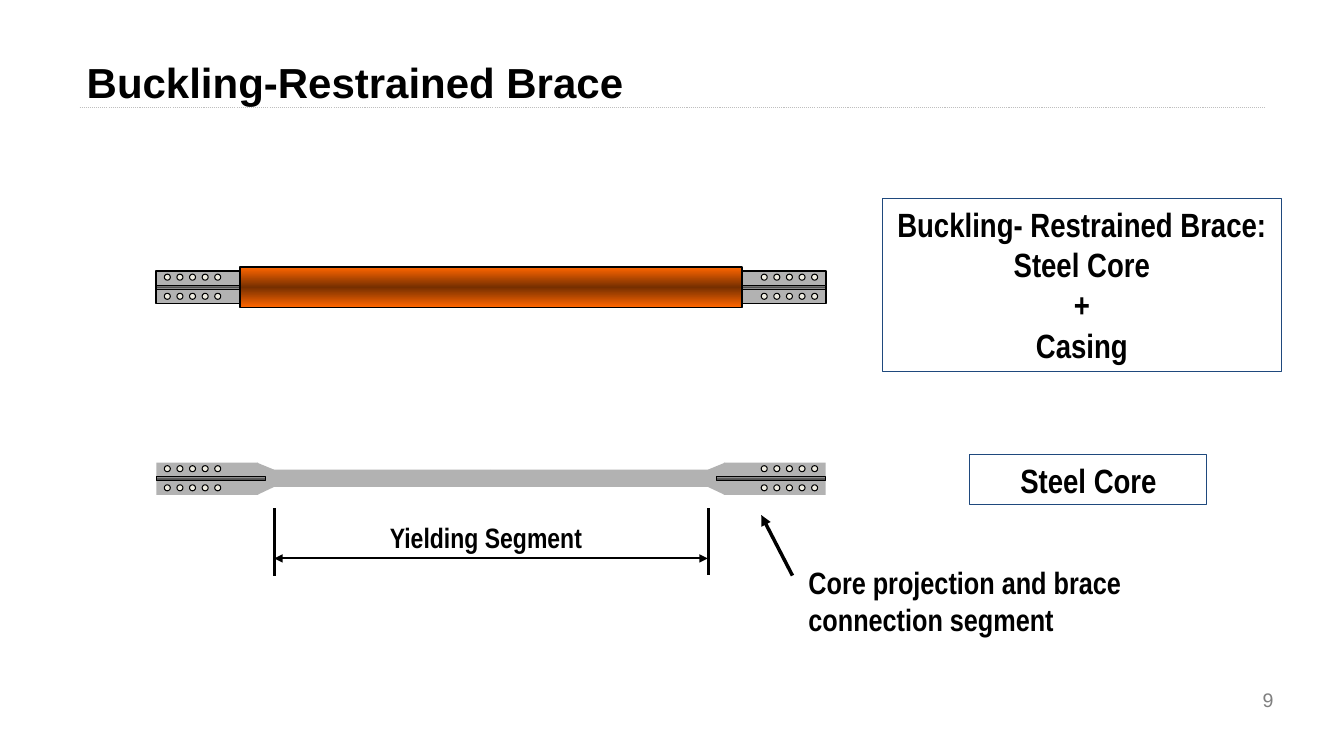
from copy import deepcopy

from lxml import etree
from pptx import Presentation
from pptx.dml.color import RGBColor
from pptx.enum.dml import MSO_LINE
from pptx.enum.shapes import MSO_CONNECTOR, MSO_SHAPE as SHAPE
from pptx.enum.text import MSO_ANCHOR as ANCHOR, MSO_AUTO_SIZE as FIT, PP_ALIGN as ALIGN
from pptx.oxml.ns import qn
from pptx.util import Inches, Pt

BLACK, STEEL, HOLE, NAVY = "000000", "B2B2B2", "EEECE1", "1F497D"
STEEL_SHADE = (STEEL, "525252", STEEL)
CASING_SHADE = ("FF6600", "762F00", "FF6600")
MIRROR = 9.74  # left end + right end of the brace

deck = Presentation()
deck.slide_width, deck.slide_height = Inches(13.33), Inches(7.5)
page = deck.slides.add_slide(deck.slide_layouts[5])


def write(box, text, size, font="Arial Narrow", color=BLACK, bold=True,
          align=ALIGN.LEFT, anchor=ANCHOR.TOP):
    frame = box.text_frame
    frame.word_wrap, frame.auto_size = True, FIT.NONE
    frame.vertical_anchor = anchor
    para = frame.paragraphs[0]
    para.text, para.alignment = text, align
    for span in para.runs:
        span.font.name, span.font.size, span.font.bold = font, Pt(size), bold
        span.font.color.rgb = RGBColor.from_string(color)


def paint(shape, fill=None, line=None, width=0.75):
    """Fill with one colour, or with a vertical gradient of three."""
    shape.shadow.inherit = False
    if isinstance(fill, tuple):
        shape.fill.gradient()
        shape.fill.gradient_angle = 270
        stop_list = shape.fill._xPr.find(qn("a:gradFill")).find(qn("a:gsLst"))
        stop_list.insert(1, deepcopy(stop_list[0]))
        for index, (stop, color) in enumerate(zip(shape.fill.gradient_stops, fill)):
            stop.position = index / 2
            stop.color.rgb = RGBColor.from_string(color)
    elif fill:
        shape.fill.solid()
        shape.fill.fore_color.rgb = RGBColor.from_string(fill)
    else:
        shape.fill.background()
    if line:
        shape.line.color.rgb = RGBColor.from_string(line)
        shape.line.width = Pt(width)
    else:
        shape.line.fill.background()


# Title and page number
title = page.shapes.title
title.left, title.top, title.width, title.height = map(Inches, (0.76, 0.47, 11.97, 0.68))
write(title, "Buckling-Restrained Brace", 30, font="Arial", anchor=ANCHOR.MIDDLE)
number = page.shapes.add_textbox(*map(Inches, (9.62, 6.74, 3.11, 0.4)))
write(number, "9", 14, font="Arial", color="7F7F7F", bold=False,
      align=ALIGN.RIGHT, anchor=ANCHOR.MIDDLE)

# Steel core, bare below and outlined inside the casing above
for top, outline in ((4.59, None), (2.69, BLACK)):
    brace = page.shapes.add_group_shape().shapes
    for mirrored in (False, True):
        parts = [  # left, drop, width, height, shape, fill, line, line width
            (2.71, 0.07, 2.16, 0.17, SHAPE.RECTANGLE, STEEL, outline, 1.25),
            (1.55, 0, 1.01, 0.32, SHAPE.RECTANGLE, STEEL, outline, 1.25),
            (1.55, 0.14, 1.08, 0.04, SHAPE.RECTANGLE, STEEL_SHADE, BLACK, 0.75),
        ]
        parts += [(1.63 + 0.125 * column, drop, 0.06, 0.06, SHAPE.OVAL, HOLE, BLACK, 0.75)
                  for drop in (0.03, 0.22) for column in range(5)]

        # Taper between the end plate and the yielding segment
        corners = [(Inches(MIRROR - x if mirrored else x), Inches(top + drop))
                   for x, drop in ((2.55, 0.32), (2.72, 0.24), (2.72, 0.07), (2.55, 0))]
        outline_builder = brace.build_freeform(*corners[0])
        outline_builder.add_line_segments(corners[1:], close=True)
        paint(outline_builder.convert_to_shape(), STEEL, outline, 1.25)

        for left, drop, width, height, kind, fill, line, weight in parts:
            x = MIRROR - left - width if mirrored else left
            part = brace.add_shape(kind, *map(Inches, (x, top + drop, width, height)))
            paint(part, fill, line, weight)

# Casing
casing = page.shapes.add_shape(SHAPE.RECTANGLE, *map(Inches, (2.38, 2.65, 4.98, 0.4)))
paint(casing, CASING_SHADE, BLACK, 1)

# Framed labels
for place, text in (
    ((8.75, 1.97, 3.96, 1.72), "Buckling- Restrained Brace:\nSteel Core\n+\nCasing"),
    ((9.62, 4.51, 2.35, 0.5), "Steel Core"),
):
    label = page.shapes.add_shape(SHAPE.RECTANGLE, *map(Inches, place))
    paint(label, line=NAVY)
    write(label, text, 24, align=ALIGN.CENTER)

# Captions
for place, text, size, align in (
    ((3.12, 5.11, 3.4, 0.43), "Yielding Segment", 20, ALIGN.CENTER),
    ((7.92, 5.54, 3.96, 0.84), "Core projection and brace connection segment", 22, ALIGN.LEFT),
):
    write(page.shapes.add_textbox(*map(Inches, place)), text, size, align=align)

# Title rule, dimension lines and pointer
for ends, color, width, dash, arrows in (
    ((0.79, 1.07, 12.55, 1.07), "BFBFBF", 0.75, MSO_LINE.ROUND_DOT, ()),
    ((2.72, 5.04, 2.72, 5.71), BLACK, 2.25, None, ()),
    ((7.03, 5.04, 7.03, 5.7), BLACK, 2.25, None, ()),
    ((2.72, 5.54, 7.02, 5.54), BLACK, 1.5, None, ("a:headEnd", "a:tailEnd")),
    ((7.55, 5.11, 7.86, 5.71), BLACK, 2.5, None, ("a:headEnd",)),
):
    rule = page.shapes.add_connector(MSO_CONNECTOR.STRAIGHT, *map(Inches, ends))
    rule.line.color.rgb = RGBColor.from_string(color)
    rule.line.width = Pt(width)
    if dash:
        rule.line.dash_style = dash
    for arrow in arrows:
        etree.SubElement(rule.line._get_or_add_ln(), qn(arrow), type="triangle")
    etree.SubElement(rule._element.spPr, qn("a:effectLst"))

deck.save("out.pptx")
